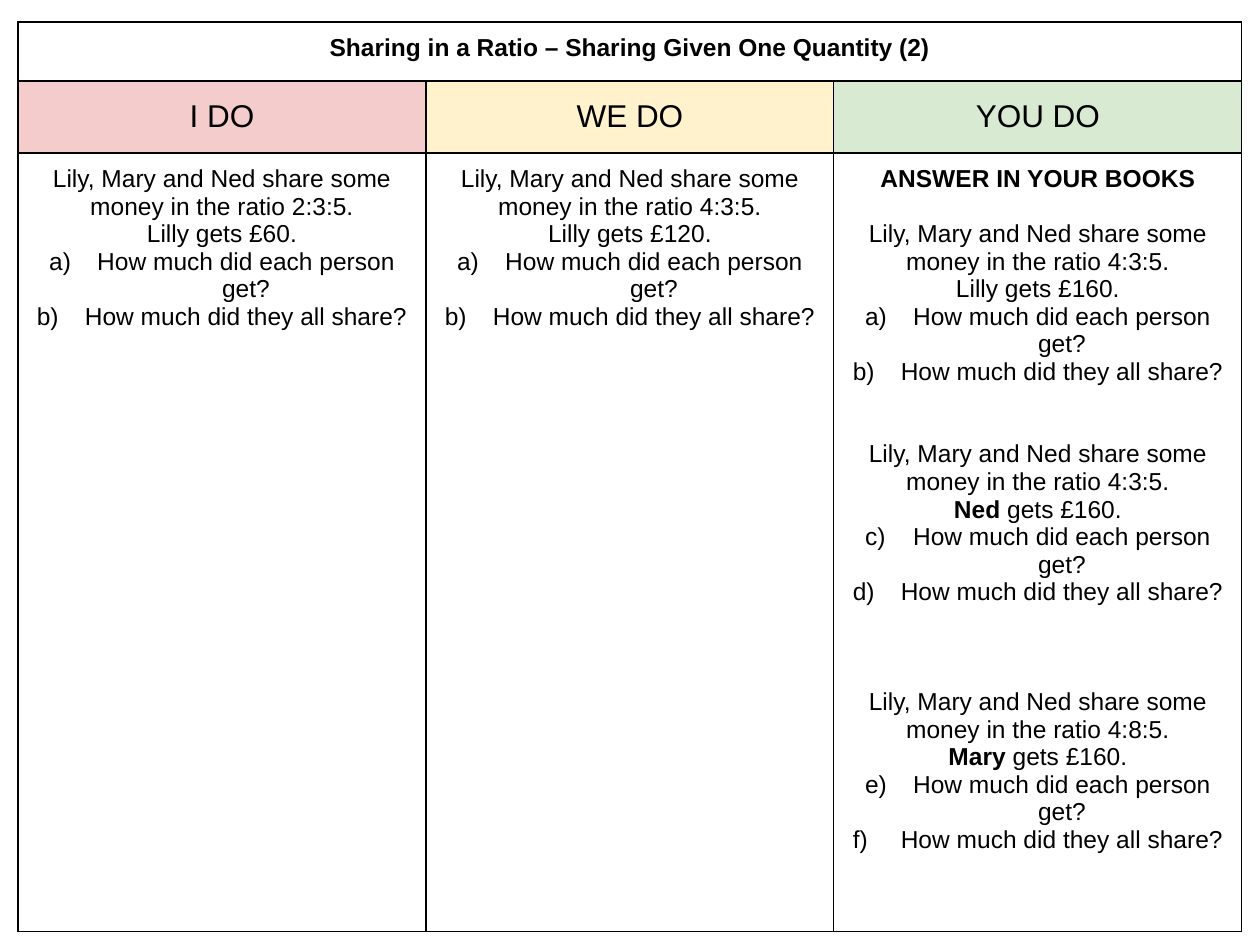
from lxml import etree
from pptx import Presentation, util as u
from pptx.dml import color
from pptx.enum import text
from pptx.oxml import ns

EMU_PER_PX = 914400 / 126
BLACK = "000000"
LINE_PT = 15.7  # height of one line of 14 pt text
INDENT = 48
TITLE = "Sharing in a Ratio – Sharing Given One Quantity (2)"
# Each stage: heading, colour, instruction, problems.
# Each problem: ratio, name, name in bold, amount, lines of space above.
STAGES = [
    ("I DO", "F4CCCC", None, [("2:3:5", "Lilly", False, 60, 0)]),
    ("WE DO", "FFF2CC", None, [("4:3:5", "Lilly", False, 120, 0)]),
    ("YOU DO", "D9EAD3", "ANSWER IN YOUR BOOKS", [
        ("4:3:5", "Lilly", False, 160, 1),
        ("4:3:5", "Ned", True, 160, 2),
        ("4:8:5", "Mary", True, 160, 3),
    ]),
]


def px(length):
    return u.Emu(round(length * EMU_PER_PX))


def rgb(value):
    return color.RGBColor.from_string(value)


def sub(parent, tag, **attributes):
    return etree.SubElement(parent, ns.qn(tag), attributes)


def style_cell(cell, fill=None):
    cell.margin_left = cell.margin_right = u.Inches(0.1)
    cell.margin_top = cell.margin_bottom = u.Inches(0.1)
    properties = cell._tc.get_or_add_tcPr()
    for side in "LRTB":
        border = sub(properties, f"a:ln{side}", w=str(u.Pt(0.75)))
        sub(sub(border, "a:solidFill"), "a:srgbClr", val=BLACK)
    if fill:
        cell.fill.solid()
        cell.fill.fore_color.rgb = rgb(fill)
    else:
        cell.fill.background()


def add_line(cell, runs, size=14, lines_above=0):
    """Write a centred paragraph from (wording, bold) pairs."""
    frame = cell.text_frame
    line = frame.paragraphs[0]
    if line.runs:
        line = frame.add_paragraph()
    line.alignment = text.PP_ALIGN.CENTER
    line.font.size, line.font.name = u.Pt(size), "Arial"
    line.font.color.rgb = rgb(BLACK)
    if lines_above:
        line.space_before = u.Pt(LINE_PT * lines_above)
    for wording, bold in runs:
        run = line.add_run()
        run.text, run.font.bold = wording, bold
    return line


def add_question(cell, wording, first_letter):
    line = add_line(cell, [(wording, False)])
    properties = line._p.get_or_add_pPr()
    properties.set("marL", str(px(INDENT)))
    properties.set("indent", str(-px(INDENT)))
    # The list marker comes before the default run properties
    defaults = properties.find(ns.qn("a:defRPr"))
    sub(sub(properties, "a:buClr"), "a:srgbClr", val=BLACK)
    sub(properties, "a:buFont", typeface="Arial")
    sub(properties, "a:buAutoNum", type="alphaLcParenR", startAt=str(first_letter))
    properties.append(defaults)


def write_problem(cell, problem, first_letter):
    ratio, name, bold, amount, lines_above = problem
    intro = f"Lily, Mary and Ned share some money in the ratio {ratio}."
    add_line(cell, [(intro, False)], lines_above=lines_above)
    add_line(cell, [(name, bold), (f" gets £{amount}.", False)])
    add_question(cell, "How much did each person get?", first_letter)
    add_question(cell, "How much did they all share?", first_letter)


def write_stage(heading_cell, problems_cell, stage):
    heading, fill, instruction, problems = stage
    style_cell(heading_cell, fill)
    heading_cell.vertical_anchor = text.MSO_ANCHOR.MIDDLE
    add_line(heading_cell, [(heading, False)], size=18)
    style_cell(problems_cell)
    if instruction:
        add_line(problems_cell, [(instruction, True)])
    for number, problem in enumerate(problems):
        write_problem(problems_cell, problem, 2 * number + 1)


def add_lesson_table(slide, left, top, width, height):
    title_height, heading_height = 59, 72
    heights = [title_height, heading_height, height - title_height - heading_height]
    lesson = slide.shapes.add_table(
        len(heights), len(STAGES), px(left), px(top), px(width), px(height)).table
    lesson.first_row = lesson.horz_banding = False
    for row, row_height in zip(lesson.rows, heights):
        row.height = px(row_height)
    for column in lesson.columns:
        column.width = px(width / len(STAGES))

    # Title across all columns
    for index in range(len(STAGES)):
        style_cell(lesson.cell(0, index))
    title = lesson.cell(0, 0)
    title.merge(lesson.cell(0, len(STAGES) - 1))
    add_line(title, [(TITLE, True)])

    # One column for each stage
    for index, stage in enumerate(STAGES):
        write_stage(lesson.cell(1, index), lesson.cell(2, index), stage)


def main():
    deck = Presentation()
    deck.slide_width, deck.slide_height = px(1260), px(945)
    slide = deck.slides.add_slide(deck.slide_layouts[6])
    add_lesson_table(slide, 18, 22, 1224, 910)
    deck.save("out.pptx")


if __name__ == "__main__":
    main()
